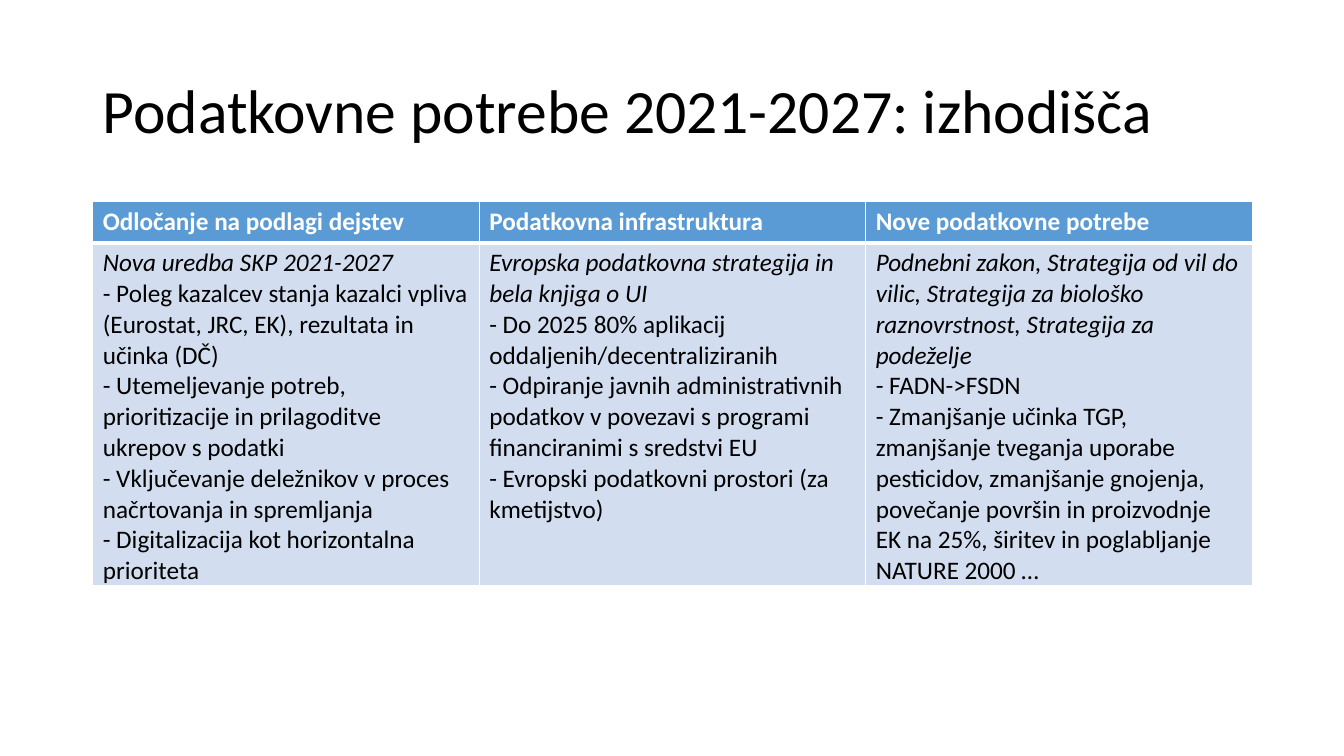
from lxml.etree import SubElement
from pptx import Presentation
from pptx.dml.color import RGBColor
from pptx.enum.text import MSO_ANCHOR
from pptx.oxml.ns import qn
from pptx.util import Inches, Pt

TITLE = "Podatkovne potrebe 2021-2027: izhodišča"
# Each column: heading, source documents, points
COLUMNS = [
    ("Odločanje na podlagi dejstev",
     "Nova uredba SKP 2021-2027",
     ["- Poleg kazalcev stanja kazalci vpliva (Eurostat, JRC, EK), rezultata in učinka (DČ)",
      "- Utemeljevanje potreb, prioritizacije in prilagoditve ukrepov s podatki",
      "- Vključevanje deležnikov v proces načrtovanja in spremljanja",
      "- Digitalizacija kot horizontalna prioriteta"]),
    ("Podatkovna infrastruktura",
     "Evropska podatkovna strategija in bela knjiga o UI",
     ["- Do 2025 80% aplikacij oddaljenih/decentraliziranih",
      "- Odpiranje javnih administrativnih podatkov v povezavi s programi "
      "financiranimi s sredstvi EU",
      "- Evropski podatkovni prostori (za kmetijstvo)"]),
    ("Nove podatkovne potrebe",
     "Podnebni zakon, Strategija od vil do vilic, Strategija za biološko "
     "raznovrstnost, Strategija za podeželje",
     ["- FADN->FSDN",
      "- Zmanjšanje učinka TGP, zmanjšanje tveganja uporabe pesticidov, "
      "zmanjšanje gnojenja, povečanje površin in proizvodnje EK na 25%, "
      "širitev in poglabljanje NATURE 2000 …"]),
]

FONT = "Calibri"
BLACK = RGBColor(0x00, 0x00, 0x00)
WHITE = RGBColor(0xFF, 0xFF, 0xFF)
HEADER_BLUE = RGBColor(0x5B, 0x9B, 0xD5)
BODY_BLUE = RGBColor(0xD2, 0xDE, 0xEF)

LEFT, WIDTH = 0.92, 11.5
TITLE_TOP, TITLE_HEIGHT = 0.4, 1.45
TABLE_TOP = 2
HEADER_HEIGHT, BODY_HEIGHT = 0.41, 3.4
THIN, THICK = 1, 3


def write(paragraph, text, size=18, color=BLACK, bold=False, italic=False):
    run = paragraph.add_run()
    run.text = text
    font = run.font
    font.name, font.size = FONT, Pt(size)
    font.bold, font.italic = bold, italic
    font.color.rgb = color


def style_cell(cell, fill, top, bottom):
    """Give the cell white borders, then its fill, in schema order."""
    properties = cell._tc.get_or_add_tcPr()
    borders = {"a:lnL": THIN, "a:lnR": THIN, "a:lnT": top, "a:lnB": bottom}
    for side, points in borders.items():
        line = SubElement(properties, qn(side), w=str(Pt(points)))
        SubElement(SubElement(line, qn("a:solidFill")), qn("a:srgbClr"), val=str(WHITE))
    cell.fill.solid()
    cell.fill.fore_color.rgb = fill


def add_title(slide):
    frame = slide.shapes.add_textbox(
        Inches(LEFT), Inches(TITLE_TOP), Inches(WIDTH), Inches(TITLE_HEIGHT)).text_frame
    frame.word_wrap = True
    frame.vertical_anchor = MSO_ANCHOR.MIDDLE
    frame.paragraphs[0].line_spacing = 0.9
    write(frame.paragraphs[0], TITLE, size=44)


def add_needs_table(slide):
    table = slide.shapes.add_table(
        2, len(COLUMNS), Inches(LEFT), Inches(TABLE_TOP),
        Inches(WIDTH), Inches(HEADER_HEIGHT + BODY_HEIGHT)).table
    table.rows[0].height = Inches(HEADER_HEIGHT)
    table.rows[1].height = Inches(BODY_HEIGHT)
    for column, (heading, documents, points) in enumerate(COLUMNS):
        header, body = table.cell(0, column), table.cell(1, column)
        style_cell(header, HEADER_BLUE, top=THIN, bottom=THICK)
        style_cell(body, BODY_BLUE, top=THICK, bottom=THIN)
        write(header.text_frame.paragraphs[0], heading, color=WHITE, bold=True)
        write(body.text_frame.paragraphs[0], documents, italic=True)
        for point in points:
            write(body.text_frame.add_paragraph(), point)


def main():
    presentation = Presentation()
    presentation.slide_width = Inches(13.33)
    presentation.slide_height = Inches(7.5)
    slide = presentation.slides.add_slide(presentation.slide_layouts[6])
    add_title(slide)
    add_needs_table(slide)
    presentation.save("out.pptx")


if __name__ == "__main__":
    main()
